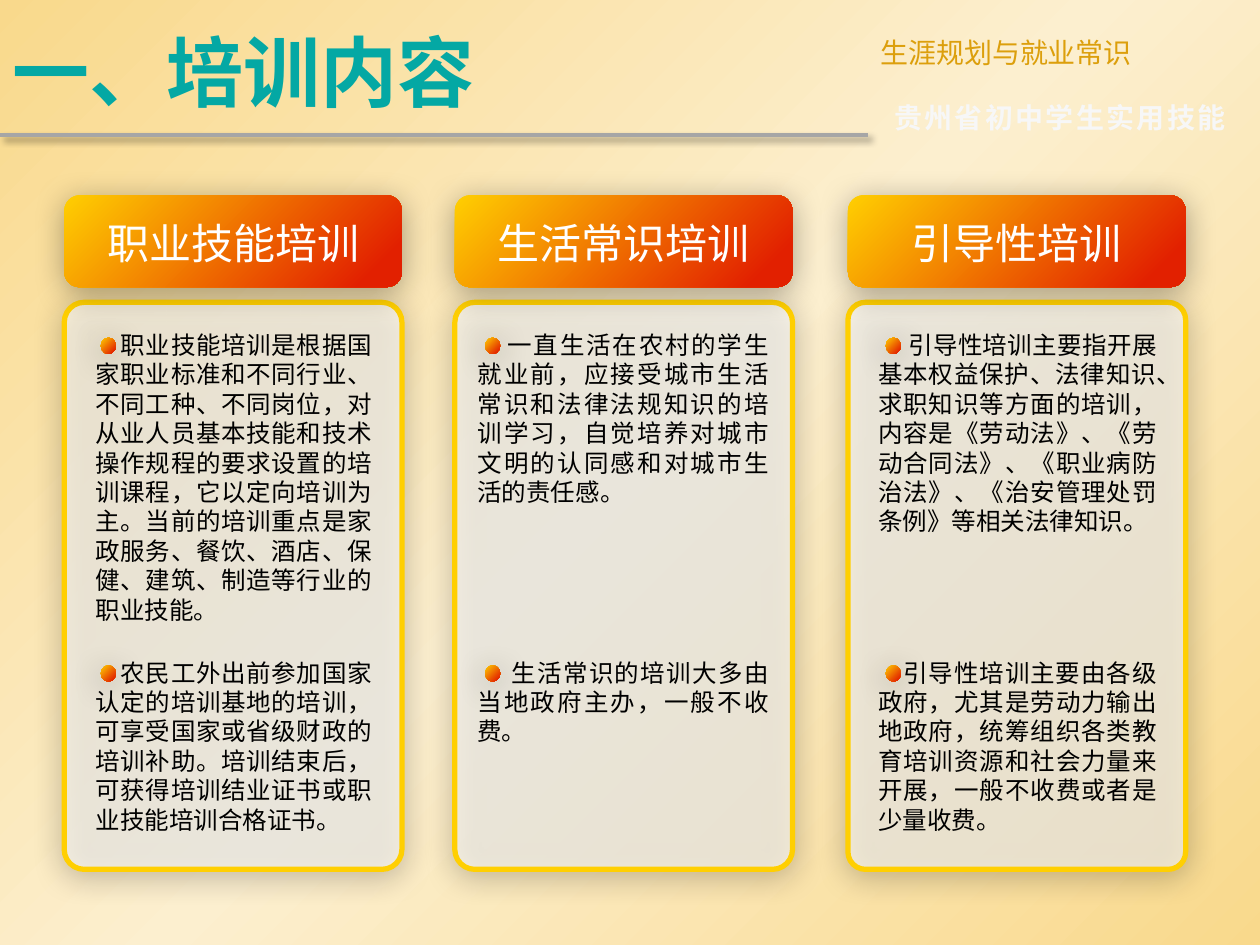
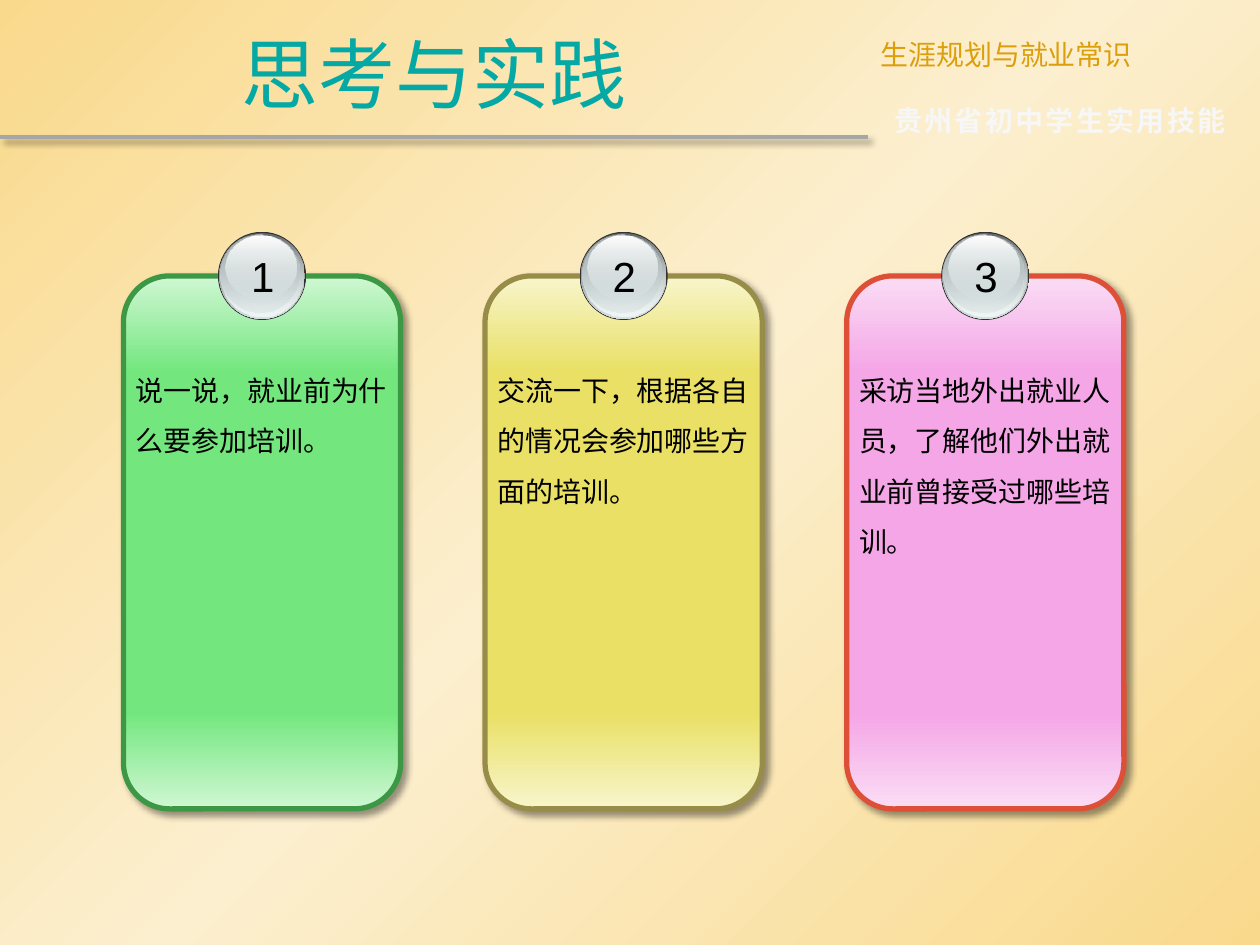
from lxml import etree
from pptx import Presentation
from pptx.dml.color import RGBColor
from pptx.enum import shapes, text
from pptx.oxml import parse_xml
from pptx.oxml.ns import nsdecls, qn
from pptx.util import Inches, Pt

# Shared look
CJK, LATIN = "Noto Sans CJK SC", "Arial"
TEAL, GOLD, GREY, PALE = "04A8A4", "DC9F0C", "A6A6A6", "F7F7F7"
BLACK, WHITE, YELLOW = "000000", "FFFFFF", "FFCF01"
BACKGROUND = [(0, "F9D98C"), (50, "FCEFCF"), (100, "F9D98C")]
FLAME = [(0, YELLOW), (90, "E22000")]
GLOW = (33, 17.8, 3, 87)  # opacity %, blur pt, distance pt, angle
DROP = (40, 4, 3, 45)
RULE_END = 6.89
COURSE, PROGRAMME = "生涯规划与就业常识", "贵州省初中学生实用技能"
ROUND, OVAL = shapes.MSO_SHAPE.ROUNDED_RECTANGLE, shapes.MSO_SHAPE.OVAL
LEFT, CENTER, JUSTIFY = (text.PP_ALIGN.LEFT, text.PP_ALIGN.CENTER,
                         text.PP_ALIGN.JUSTIFY)

# Slide 1: heading, card left, corner, text left, text width, bullet left,
# then two (first-line indent, paragraph) pairs
TRAININGS = [
    ("职业技能培训", 0.51, 0.059, 0.66, 2.39, 0.8, [
        (0.2, "职业技能培训是根据国家职业标准和不同行业、不同工种、不同岗位，"
              "对从业人员基本技能和技术操作规程的要求设置的培训课程，它以定向培训为主。"
              "当前的培训重点是家政服务、餐饮、酒店、保健、建筑、制造等行业的职业技能。"),
        (0.2, "农民工外出前参加国家认定的培训基地的培训，可享受国家或省级财政的培训补助。"
              "培训结束后，可获得培训结业证书或职业技能培训合格证书。")]),
    ("生活常识培训", 3.61, 0.059, 3.69, 2.51, 3.85, [
        (0.24, "一直生活在农村的学生就业前，应接受城市生活常识和法律法规知识的培训学习，"
               "自觉培养对城市文明的认同感和对城市生活的责任感。"),
        (0.27, "生活常识的培训大多由当地政府主办，一般不收费。")]),
    ("引导性培训", 6.73, 0.052, 6.87, 2.41, 7.03, [
        (0.24, "引导性培训主要指开展基本权益保护、法律知识、求职知识等方面的培训，"
               "内容是《劳动法》、《劳动合同法》、《职业病防治法》、"
               "《治安管理处罚条例》等相关法律知识。"),
        (0.2, "引导性培训主要由各级政府，尤其是劳动力输出地政府，"
              "统筹组织各类教育培训资源和社会力量来开展，一般不收费或者是少量收费。")]),
]
PARAGRAPH_TOPS = [(2.57, 2.46), (5.17, 1.52)]

# Slide 2: task, edge colour, body colour, colour at both ends
TASKS = [
    ("说一说，就业前为什么要参加培训。", "3C9844", "73E77E", "D0F7D4"),
    ("交流一下，根据各自的情况会参加哪些方面的培训。", "978D48", "E9E065", "F8F5CC"),
    ("采访当地外出就业人员，了解他们外出就业前曾接受过哪些培训。",
     "DD4F37", "F4A6E6", "FBDDF5"),
]
# Ball layers: offset from the card's left, top, width, height, gradient stops
BALL = [
    (0.75, 1.84, 0.7, 0.7, [(0, "333333"), (100, "333333")]),
    (0.76, 1.85, 0.68, 0.68, [(0, "636869"), (100, "D6E1E2")]),
    (0.77, 1.85, 0.66, 0.66, [(0, "D6E1E2", 0), (100, "F1F5F5")]),
    (0.77, 1.86, 0.63, 0.62, [(0, "AAB2B3"), (100, "D6E1E2", 48)]),
    (0.81, 1.87, 0.56, 0.5, [(0, "FFFFFF"), (100, "D6E1E2", 38)]),
]


def rgb(value):
    return RGBColor.from_string(value)


def gradient(fill, parent, stops, angle):
    """Give a fill any number of stops: (position %, colour[, opacity %])."""
    fill.gradient()
    gs = "".join(
        f'<a:gs pos="{pos * 1000}"><a:srgbClr val="{color}">'
        f'<a:alpha val="{(alpha or [100])[0] * 1000}"/></a:srgbClr></a:gs>'
        for pos, color, *alpha in stops)
    parent.replace(parent.find(qn("a:gradFill")), parse_xml(
        f'<a:gradFill {nsdecls("a")} rotWithShape="1"><a:gsLst>{gs}</a:gsLst>'
        f'<a:lin ang="{angle * 60000}" scaled="0"/></a:gradFill>'))


def set_shadow(spPr, shadow=None):
    """Replace the theme's effects by one outer shadow, or by none."""
    for old in spPr.findall(qn("a:effectLst")):
        spPr.remove(old)
    effects = etree.SubElement(spPr, qn("a:effectLst"))
    if shadow:
        alpha, blur, dist, angle = shadow
        outer = etree.SubElement(
            effects, qn("a:outerShdw"), blurRad=str(Pt(blur)),
            dist=str(Pt(dist)), dir=str(angle * 60000), algn="ctr", rotWithShape="0")
        color = etree.SubElement(outer, qn("a:srgbClr"), val=BLACK)
        etree.SubElement(color, qn("a:alpha"), val=str(alpha * 1000))


def add_shape(parent, kind, box, fill, angle=45, line=None, shadow=None, corner=None):
    """fill is a list of gradient stops, or (colour, opacity %)."""
    sp = parent.add_shape(kind, *map(Inches, box))
    spPr = sp._element.spPr
    if isinstance(fill, list):
        gradient(sp.fill, spPr, fill, angle)
    else:
        color, alpha = fill
        sp.fill.solid()
        sp.fill.fore_color.rgb = rgb(color)
        etree.SubElement(spPr.find(".//" + qn("a:srgbClr")), qn("a:alpha"),
                         val=str(alpha * 1000))
    if line:
        sp.line.color.rgb = rgb(line)
        sp.line.width = Pt(3)
    else:
        sp.line.fill.background()
    if corner:
        sp.adjustments[0] = corner
    set_shadow(spPr, shadow)


def write(sp, words, size, color, align=LEFT, font=CJK, bold=False,
          anchor=text.MSO_ANCHOR.MIDDLE):
    tf = sp.text_frame
    tf.word_wrap = True
    tf.auto_size = text.MSO_AUTO_SIZE.NONE
    tf.vertical_anchor = anchor
    tf.text = words
    p = tf.paragraphs[0]
    p.alignment = align
    f = p.runs[0].font
    f.size, f.bold, f.name = Pt(size), bold, font
    f.color.rgb = rgb(color)
    etree.SubElement(p.runs[0]._r.rPr, qn("a:ea"), typeface=font)
    return p


def add_text(parent, box, words, size, color, **style):
    return write(parent.add_textbox(*map(Inches, box)), words, size, color, **style)


def add_body(parent, box, words, size, leading, align=LEFT):
    p = add_text(parent, box, words, size, BLACK, align=align,
                 anchor=text.MSO_ANCHOR.TOP)
    p.line_spacing = Pt(leading)
    return p


def add_slide(prs, title, dy=0, align=LEFT, bold=False):
    """Start a slide with the background, title, rule and course names."""
    s = prs.slides.add_slide(prs.slide_layouts[5])
    fill = s.background.fill
    fill.solid()
    gradient(fill, s.element.find(".//" + qn("p:bgPr")), BACKGROUND, 45)

    rule = s.shapes.add_connector(
        shapes.MSO_CONNECTOR.STRAIGHT, 0, Inches(1.07 + dy),
        Inches(RULE_END), Inches(1.07 + dy))
    rule.line.color.rgb = rgb(GREY)
    rule.line.width = Pt(2.25)
    set_shadow(rule._element.spPr, DROP)

    add_text(s.shapes, (RULE_END, 0.23 + dy, 3.11, 0.37), COURSE, 16, GOLD)
    p = add_text(s.shapes, (7, 0.75 + dy, 3, 0.37), PROGRAMME, 16, PALE, bold=True)
    p.runs[0]._r.rPr.set("spc", "140")

    ph = s.shapes.title
    ph.left, ph.top, ph.width, ph.height = map(
        Inches, (0, 0.05 + dy, RULE_END, 1.02))
    write(ph, title, 44, TEAL, align=align, bold=bold)
    return s


def build_trainings(prs):
    s = add_slide(prs, "一、培训内容", bold=True)
    for heading, x, corner, text_x, text_w, dot_x, paragraphs in TRAININGS:
        # Card and its heading
        add_shape(s.shapes, ROUND, (x, 2.4, 2.68, 4.5), (WHITE, 60),
                  line=YELLOW, shadow=GLOW, corner=corner)
        group = s.shapes.add_group_shape().shapes
        add_shape(group, ROUND, (x, 1.55, 2.68, 0.73), FLAME, shadow=GLOW)
        add_text(group, (x, 1.67, 2.68, 0.51), heading, 24, WHITE, align=CENTER)
        # Paragraphs with their round markers
        for (top, height), (indent, words) in zip(PARAGRAPH_TOPS, paragraphs):
            p = add_body(s.shapes, (text_x, top, text_w, height), words,
                         14, 16.8, align=JUSTIFY)
            p._p.get_or_add_pPr().set("indent", str(Inches(indent)))
            add_shape(s.shapes, OVAL, (dot_x, top + 0.11, 0.12, 0.13), FLAME,
                      shadow=GLOW)


def build_tasks(prs):
    s = add_slide(prs, "思考与实践", dy=0.02, align=CENTER)
    for i, (task, edge, body, end) in enumerate(TASKS):
        x = 0.98 + 2.87 * i
        group = s.shapes.add_group_shape().shapes
        # Card
        stops = [(0, end), (18, body), (82, body), (100, end)]
        add_shape(group, ROUND, (x, 2.19, 2.2, 4.23), stops, angle=90,
                  line=edge, shadow=DROP)
        add_body(group, (x, 2.78, 2.2, 1.72), task, 16, 28.8)
        # Numbered ball
        for dx, top, width, height, layer in BALL:
            add_shape(group, OVAL, (x + dx, top, width, height), layer, angle=90)
        add_text(group, (x + 0.91, 1.94, 0.39, 0.5), str(i + 1), 24, BLACK,
                 align=CENTER, font=LATIN)


def main():
    prs = Presentation()
    prs.slide_width, prs.slide_height = Inches(10), Inches(7.5)
    build_trainings(prs)
    build_tasks(prs)
    prs.save("out.pptx")


if __name__ == "__main__":
    main()
